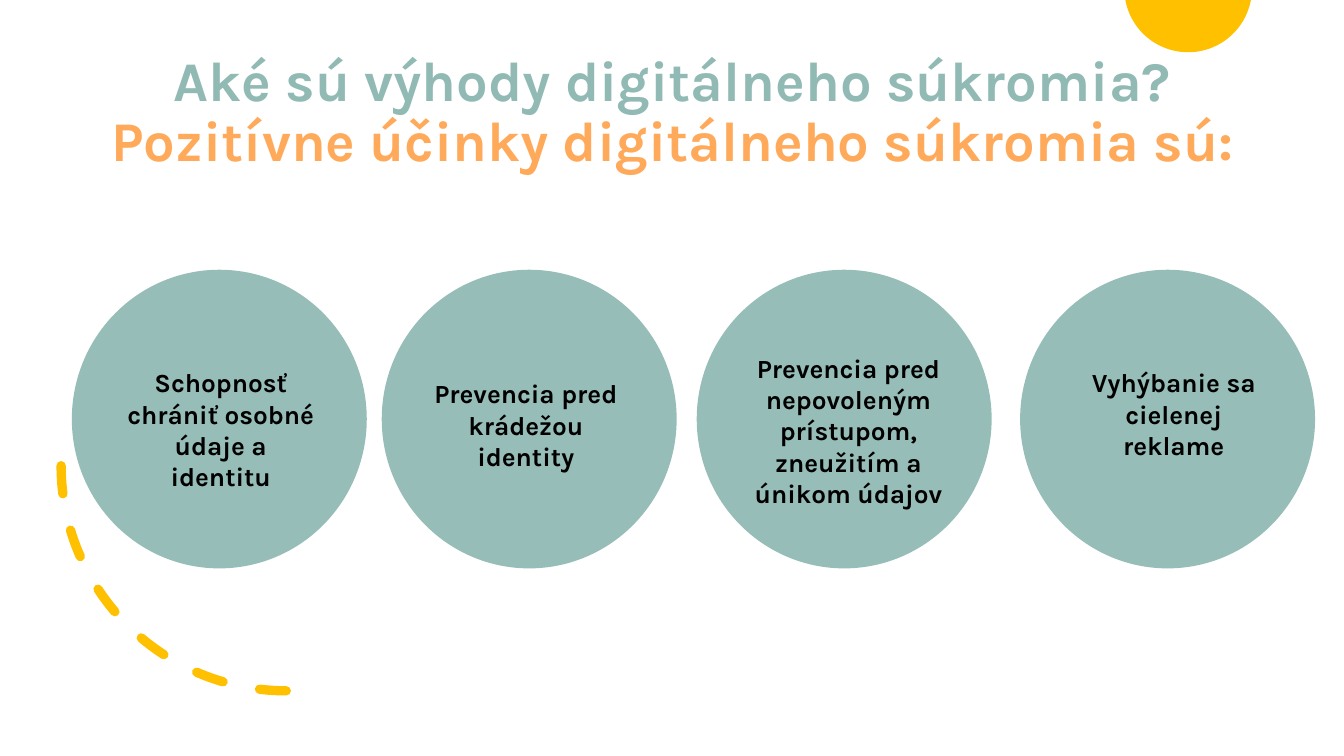
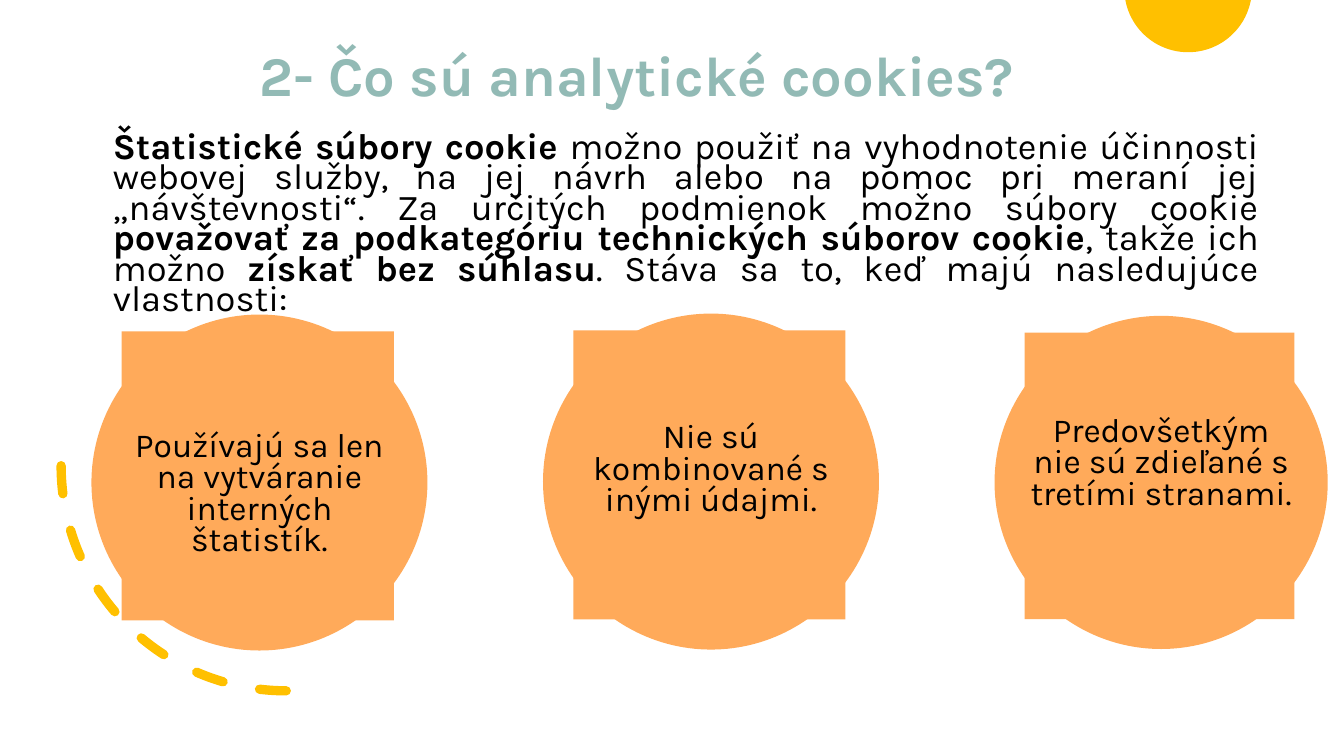
"""Build two slides on digital privacy and analytical cookies."""
from dataclasses import dataclass
from math import asin, cos, pi, sin

from pptx import Presentation
from pptx.dml.color import RGBColor
from pptx.enum.dml import MSO_LINE
from pptx.enum.shapes import MSO_SHAPE
from pptx.enum.text import MSO_ANCHOR, PP_ALIGN
from pptx.util import Pt


@dataclass(frozen=True)
class Theme:
    font: str = "Karla"
    teal: str = "92BAB5"
    disc: str = "96BDB8"
    peach: str = "FFAA5A"
    gold: str = "FFC000"
    ink: str = "000000"
    head: float = 60
    body: float = 38.9
    small: float = 28
    large: float = 36
    lead: float = 33.6


THEME = Theme()

GAINS_HEAD = [
    ("Aké sú výhody digitálneho súkromia?", THEME.teal),
    ("Pozitívne účinky digitálneho súkromia sú:", THEME.peach),
]
GAINS = [
    ("Schopnosť chrániť osobné údaje a identitu", 77, (132.5, 393, 208, 102)),
    ("Prevencia pred krádežou identity", 409, (463.7, 404.6, 199.4, 102)),
    ("Prevencia pred nepovoleným prístupom, zneužitím a únikom údajov",
     746.5, (795.6, 377.3, 226.8, 170.6)),
    ("Vyhýbanie sa cielenej reklame", 1093, (1151.3, 393, 212.4, 102)),
]
COOKIE_HEAD = [("2- Čo sú analytické cookies?", THEME.teal)]
COOKIE_TEXT = [
    ("Štatistické súbory cookie", True),
    (" možno použiť na vyhodnotenie účinnosti webovej služby, na jej návrh "
     "alebo na pomoc pri meraní jej „návštevnosti“. Za určitých podmienok "
     "možno súbory cookie ", False),
    ("považovať za podkategóriu technických súborov cookie", True),
    (", takže ich možno ", False),
    ("získať bez súhlasu", True),
    (". Stáva sa to, keď majú nasledujúce vlastnosti:", False),
]
TRAITS = [
    ("Používajú sa len na vytváranie interných štatistík.", 337, 360, 463.7, 139),
    ("Nie sú kombinované s inými údajmi.", 336, 360, 454.3, 137.5),
    ("Predovšetkým nie sú zdieľané s tretími stranami.", 338.4, 357, 447.8, 104.4),
]


def color(code):
    return RGBColor.from_string(code)


def paint(shape, code):
    shape.shadow.inherit = False
    shape.fill.solid()
    shape.fill.fore_color.rgb = color(code)
    shape.line.fill.background()


def add_form(shapes, kind, box, code):
    shape = shapes.add_shape(kind, *map(Pt, box))
    paint(shape, code)


def add_box(slide, box, align, size, inset=True):
    frame = slide.shapes.add_textbox(*map(Pt, box)).text_frame
    frame.word_wrap = True
    if not inset:
        frame.margin_left = frame.margin_right = 0
        frame.margin_top = frame.margin_bottom = 0
    para = frame.paragraphs[0]
    para.alignment = align
    para.font.name = THEME.font
    para.font.size = Pt(size)
    para.font.color.rgb = color(THEME.ink)
    return frame, para


def add_label(slide, text, box, size, bold):
    frame, para = add_box(slide, box, PP_ALIGN.CENTER, size, inset=False)
    para.text = text
    para.font.bold = bold
    para.line_spacing = Pt(THEME.lead)


def add_title(slide, lines, box):
    frame, para = add_box(slide, box, PP_ALIGN.CENTER, THEME.head)
    frame.vertical_anchor = MSO_ANCHOR.MIDDLE
    para.font.bold = True
    para.line_spacing = 0.9
    para.space_after = Pt(9)
    for row, (text, code) in enumerate(lines):
        if row:
            para.add_line_break()
        run = para.add_run()
        run.text = text
        run.font.color.rgb = color(code)


def add_sun(slide):
    mid, top, rad, steps = 1273, -12.4, 68.4, 48
    start = asin(-top / rad)
    turns = [start + (pi - 2 * start) * i / steps for i in range(steps + 1)]
    dots = [(Pt(mid + rad * cos(a)), Pt(max(0, top + rad * sin(a)))) for a in turns]
    form = slide.shapes.build_freeform(*dots[0])
    form.add_line_segments(dots[1:], close=True)
    paint(form.convert_to_shape(), THEME.gold)


def add_arc(slide):
    arc = slide.shapes.add_shape(MSO_SHAPE.ARC, *map(Pt, (65.5, 257.8, 482.4, 482.4)))
    arc.shadow.inherit = False
    arc.fill.background()
    arc.rotation = 90
    arc._element.spPr.xfrm.set("flipV", "1")
    arc.line.color.rgb = color(THEME.gold)
    arc.line.width = Pt(10)
    arc.line.dash_style = MSO_LINE.DASH
    arc.line._get_or_add_ln().set("cap", "rnd")


def add_base(deck, lines, box):
    slide = deck.slides.add_slide(deck.slide_layouts[6])
    add_sun(slide)
    add_title(slide, lines, box)
    add_arc(slide)
    return slide


def add_gains(deck):
    slide = add_base(deck, GAINS_HEAD, (99.4, 43.2, 1242, 156.2))
    for text, left, box in GAINS:
        add_form(slide.shapes, MSO_SHAPE.OVAL, (left, 289, 316, 320), THEME.disc)
        add_label(slide, text, box, THEME.small, True)


def add_cookies(deck):
    slide = add_base(deck, COOKIE_HEAD, (23.8, 43.2, 1316.9, 82))
    frame, para = add_box(slide, (113.8, 141, 1242, 192.2), PP_ALIGN.JUSTIFY, THEME.body)
    para.line_spacing = 0.7
    para.space_before = Pt(15)
    para.space_after = Pt(9)
    for text, bold in COOKIE_TEXT:
        run = para.add_run()
        run.text = text
        run.font.bold = bold
    first, step, wide = 98, 483.8, 280.8
    for i, (text, top, size, line, high) in enumerate(TRAITS):
        left = first + step * i
        group = slide.shapes.add_group_shape()
        add_form(group.shapes, MSO_SHAPE.OVAL, (left, top, size, size), THEME.peach)
        plate = (left + 0.09 * size, top + 0.05 * size, 0.81 * size, 0.86 * size)
        add_form(group.shapes, MSO_SHAPE.RECTANGLE, plate, THEME.peach)
        box = (left + (size - wide) / 2, line, wide, high)
        add_label(slide, text, box, THEME.large, False)


def main():
    deck = Presentation()
    deck.slide_width, deck.slide_height = Pt(1440), Pt(810)
    add_gains(deck)
    add_cookies(deck)
    deck.save("out.pptx")


if __name__ == "__main__":
    main()
